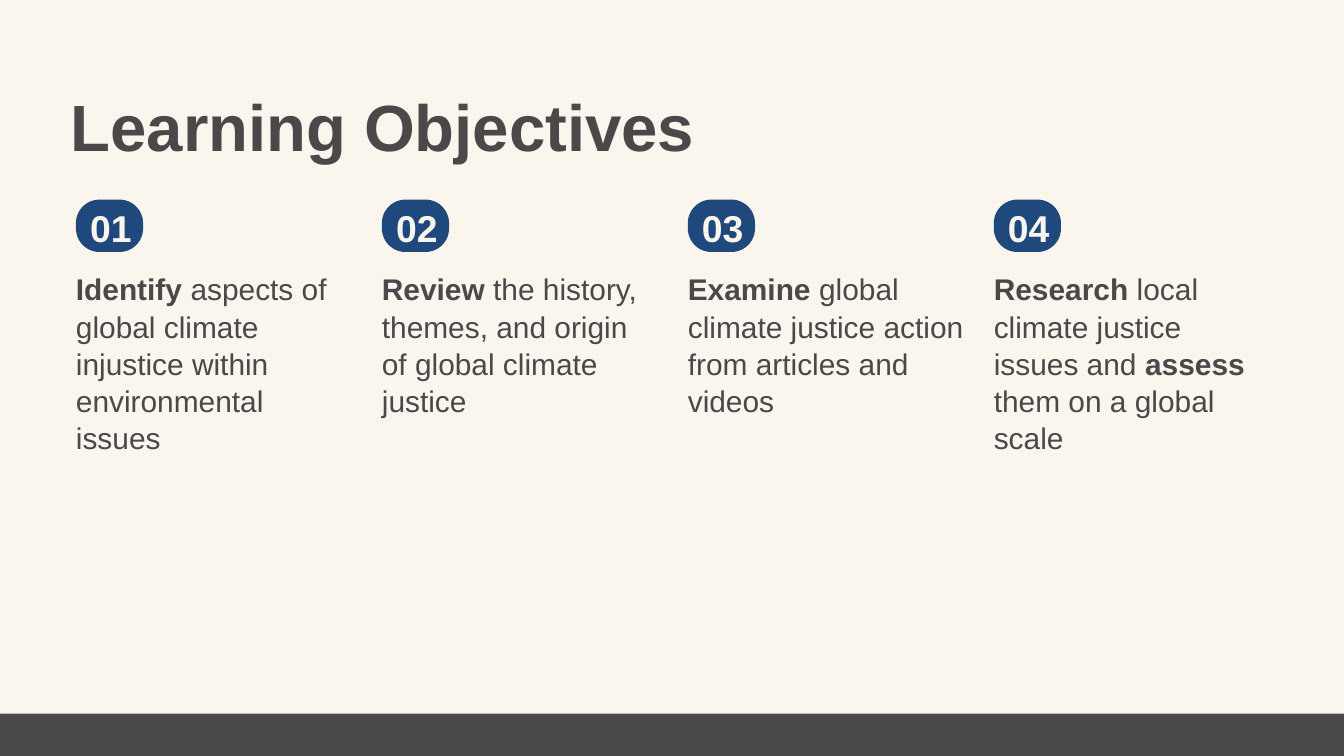
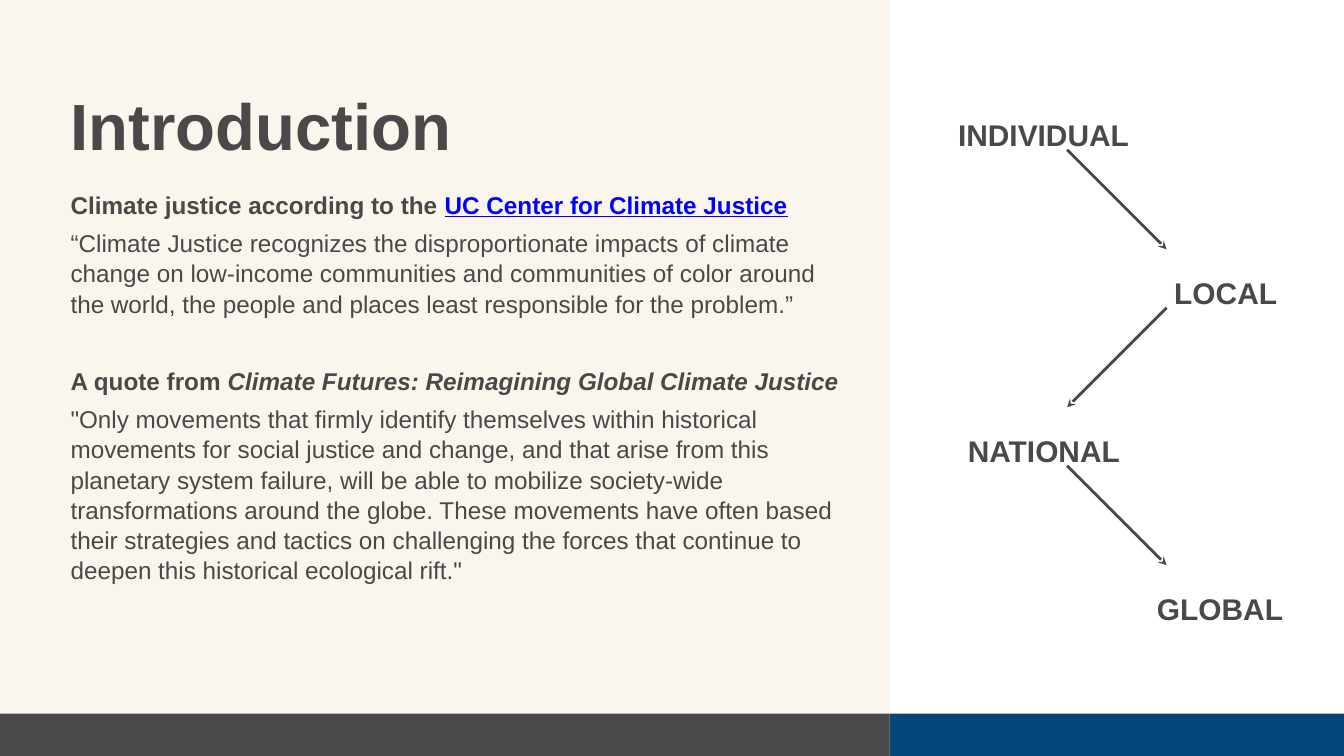
from lxml import etree
from pptx import Presentation
from pptx.dml.color import RGBColor
from pptx.enum.shapes import MSO_CONNECTOR, MSO_SHAPE
from pptx.enum.text import PP_ALIGN
from pptx.oxml.ns import qn
from pptx.util import Inches, Pt

RECT, ROUND = MSO_SHAPE.RECTANGLE, MSO_SHAPE.ROUNDED_RECTANGLE
STRAIGHT = MSO_CONNECTOR.STRAIGHT
LEFT, CENTER = PP_ALIGN.LEFT, PP_ALIGN.CENTER

CREAM = RGBColor(0xFA, 0xF6, 0xEE)
CHARCOAL = RGBColor(0x4A, 0x48, 0x49)
WHITE = RGBColor(0xFF, 0xFF, 0xFF)
BADGE_BLUE = RGBColor(0x1F, 0x49, 0x7D)
BAND_BLUE = RGBColor(0x04, 0x46, 0x7C)
LINK_BLUE = RGBColor(0x00, 0x00, 0xFF)

FONT = "Arial"
W, H = 20, 11.25
MARGIN = 1.05
BAND_TOP = 10.62
PANEL_LEFT = 13.24
BODY_SPACING, LABEL_SPACING = 1.04, 1.4

OBJECTIVES = [
    [("Identify", "b"), (" aspects of global climate injustice within environmental issues", "")],
    [("Review", "b"), (" the history, themes, and origin of global climate justice", "")],
    [("Examine", "b"), (" global climate justice action from articles and videos", "")],
    [("Research", "b"), (" local climate justice issues and ", ""), ("assess", "b"),
     (" them on a global scale", "")],
]

QUOTES = [
    (2.81,
     [("Climate justice according to the ", "b"), ("UC Center for Climate Justice", "bu")],
     "“Climate Justice recognizes the disproportionate impacts of climate change on "
     "low-income communities and communities of color around the world, the people and "
     "places least responsible for the problem.”", 1.31),
    (5.43,
     [("A quote from ", "b"), ("Climate Futures: Reimagining Global Climate Justice", "bi")],
     "\"Only movements that firmly identify themselves within historical movements for "
     "social justice and change, and that arise from this planetary system failure, will "
     "be able to mobilize society-wide transformations around the globe. These movements "
     "have often based their strategies and tactics on challenging the forces that "
     "continue to deepen this historical ecological rift.\"", 2.63),
]

SCALES = [
    ("INDIVIDUAL", 14.07, 2.92),
    ("LOCAL", 17.3, 1.88),
    ("NATIONAL", 14.22, 2.63),
    ("GLOBAL", 17.13, 2.05),
]


def add_box(s, kind, left, top, width, height, color):
    sp = s.shapes.add_shape(kind, Inches(left), Inches(top), Inches(width), Inches(height))
    sp.shadow.inherit = False
    sp.fill.solid()
    sp.fill.fore_color.rgb = color
    sp.line.fill.background()
    return sp


def add_text(s, runs, left, top, width, height, size,
             color=CHARCOAL, align=LEFT, spacing=BODY_SPACING):
    tf = s.shapes.add_textbox(Inches(left), Inches(top), Inches(width), Inches(height)).text_frame
    tf.word_wrap = True
    tf.margin_left = tf.margin_top = tf.margin_right = tf.margin_bottom = 0
    p = tf.paragraphs[0]
    p.alignment = align
    p.line_spacing = spacing
    p.font.name = FONT
    p.font.size = Pt(size)
    p.font.color.rgb = color
    for text, style in runs:
        r = p.add_run()
        r.text = text
        r.font.bold = "b" in style
        if "i" in style:
            r.font.italic = True
        if "u" in style:
            r.font.underline = True
            r.font.color.rgb = LINK_BLUE


def add_arrow(s, x1, y1, x2, y2):
    line = s.shapes.add_connector(STRAIGHT, Inches(x1), Inches(y1), Inches(x2), Inches(y2))
    line.line.color.rgb = CHARCOAL
    line.line.width = Pt(3)
    etree.SubElement(line.line._get_or_add_ln(), qn("a:tailEnd"), type="stealth")
    etree.SubElement(line._element.spPr, qn("a:effectLst"))


def add_slide(prs, title, title_top, title_width, band_width):
    s = prs.slides.add_slide(prs.slide_layouts[6])
    s.background.fill.solid()
    s.background.fill.fore_color.rgb = CREAM
    add_box(s, RECT, 0, BAND_TOP, band_width, H - BAND_TOP, CHARCOAL)
    add_text(s, [(title, "b")], MARGIN, title_top, title_width, 1.18, 70)
    return s


def build_objectives(prs):
    s = add_slide(prs, "Learning Objectives", 1.24, 17.82, W)
    first, pitch, width = 1.13, 4.553, 4.13
    for i, runs in enumerate(OBJECTIVES):
        x = first + i * pitch
        badge = add_box(s, ROUND, x, 2.97, 1, 0.78, BADGE_BLUE)
        badge.adjustments[0] = 0.45
        add_text(s, [(f"{i + 1:02}", "b")], x + 0.21, 3.02, 3.39, 0.67, 40, CREAM)
        add_text(s, runs, x, 4.01, width, 2.69 if i in (0, 3) else 2.15, 32)


def build_introduction(prs):
    s = add_slide(prs, "Introduction", 1.22, 11.76, PANEL_LEFT)
    panel_width = W - PANEL_LEFT
    add_box(s, RECT, PANEL_LEFT, 0, panel_width, BAND_TOP, WHITE)
    add_box(s, RECT, PANEL_LEFT, BAND_TOP, panel_width, H - BAND_TOP, BAND_BLUE)

    for top, heading, quote, height in QUOTES:
        add_text(s, heading, MARGIN, top, 11.68, 0.44, 26)
        add_text(s, [(quote, "")], MARGIN, top + 0.57, 11.68, height, 26)

    step, arrow_top, arrow_height = 2.35, 2.23, 1.48
    arrow_ends = (15.88, 17.36)
    for i, (label, left, width) in enumerate(SCALES):
        add_text(s, [(label, "b")], left, 1.52 + i * step, width, 0.54, 32,
                 align=CENTER, spacing=LABEL_SPACING)
        if i < len(SCALES) - 1:
            y = arrow_top + i * step
            add_arrow(s, arrow_ends[i % 2], y, arrow_ends[1 - i % 2], y + arrow_height)


def main():
    prs = Presentation()
    prs.slide_width, prs.slide_height = Inches(W), Inches(H)
    build_objectives(prs)
    build_introduction(prs)
    prs.save("out.pptx")


if __name__ == "__main__":
    main()
